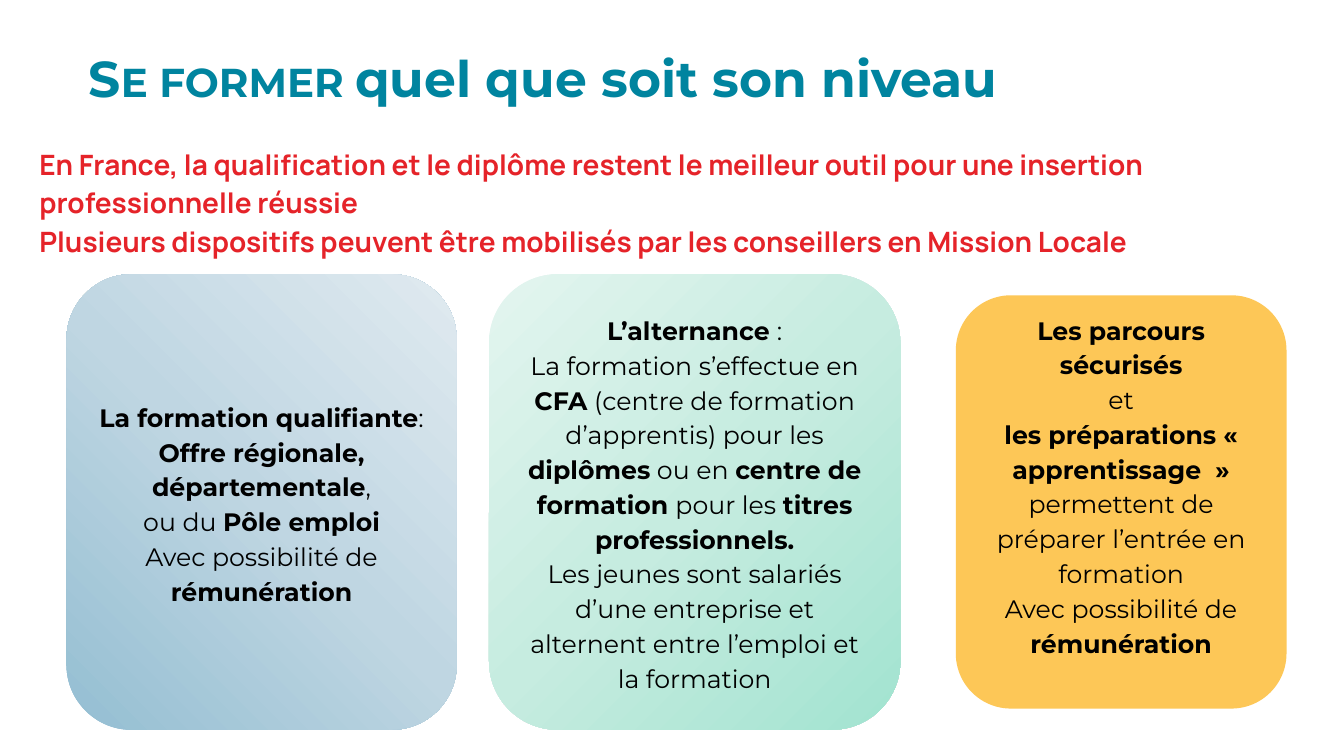
from lxml import etree
from pptx import Presentation
from pptx import util as u
from pptx.dml.color import RGBColor
from pptx.enum import shapes, text
from pptx.oxml import ns

TEAL = RGBColor(0x00, 0x84, 0x9F)
RED = RGBColor(0xE5, 0x23, 0x29)
BLACK = RGBColor(0x00, 0x00, 0x00)
YELLOW = RGBColor(0xFD, 0xC7, 0x57)
BLUES = [RGBColor(0x94, 0xBE, 0xD2), RGBColor(0xBF, 0xD6, 0xE2), RGBColor(0xE0, 0xEA, 0xF0)]
GREENS = [RGBColor(0xA2, 0xE3, 0xD0), RGBColor(0xC6, 0xEC, 0xE0), RGBColor(0xE3, 0xF5, 0xEF)]


class Deck:
    heading_font = "Montserrat"
    intro_font = "Manrope"
    inset = 0.13

    def __init__(self, width, height):
        self.prs = Presentation()
        self.prs.slide_width = u.Inches(width)
        self.prs.slide_height = u.Inches(height)
        self.s = self.prs.slides.add_slide(self.prs.slide_layouts[6])

    def fill_text(self, tf, paragraphs, font, size, color, spacing, align):
        tf.word_wrap = True
        for i, runs in enumerate(paragraphs):
            p = tf.paragraphs[0] if i == 0 else tf.add_paragraph()
            p.alignment = align
            p.line_spacing = spacing
            for content, bold in runs:
                r = p.add_run()
                r.text = content
                r.font.name = font
                r.font.size = u.Pt(size)
                r.font.bold = bold
                r.font.color.rgb = color

    def text_box(self, box, paragraphs, font, size, color, spacing):
        sp = self.s.shapes.add_textbox(*map(u.Inches, box))
        tf = sp.text_frame
        tf.margin_left = tf.margin_right = u.Inches(self.inset)
        tf.margin_top = tf.margin_bottom = u.Inches(self.inset)
        self.fill_text(tf, paragraphs, font, size, color, spacing, text.PP_ALIGN.LEFT)
        return tf

    def card(self, box, paragraphs, bottom=0.05):
        sp = self.s.shapes.add_shape(shapes.MSO_SHAPE.ROUNDED_RECTANGLE, *map(u.Inches, box))
        sp.shadow.inherit = False
        sp.line.fill.background()
        tf = sp.text_frame
        tf.vertical_anchor = text.MSO_ANCHOR.MIDDLE
        tf.margin_bottom = u.Inches(bottom)
        self.fill_text(tf, paragraphs, self.heading_font, 18, BLACK, 1.15, text.PP_ALIGN.CENTER)
        return sp

    def gradient(self, sp, colors):
        sp.fill.gradient()
        grad = sp._element.spPr.find(ns.qn("a:gradFill"))
        for child in list(grad):
            grad.remove(child)
        stops = etree.SubElement(grad, ns.qn("a:gsLst"))
        for i, color in enumerate(colors):
            stop = etree.SubElement(stops, ns.qn("a:gs"), pos=str(i * 50000))
            etree.SubElement(stop, ns.qn("a:srgbClr"), val=str(color))
        return grad

    def linear(self, sp, colors, angle):
        grad = self.gradient(sp, colors)
        etree.SubElement(grad, ns.qn("a:lin"), ang=str(angle * 60000), scaled="0")

    def radial(self, sp, colors):
        grad = self.gradient(sp, colors)
        circle = etree.SubElement(grad, ns.qn("a:path"), {"path": "circle"})
        etree.SubElement(circle, ns.qn("a:fillToRect"), l="100000", t="100000")

    def small_caps(self, r):
        r.font._element.set("cap", "small")


def main():
    deck = Deck(13.33, 7.5)

    deck.text_box((0.26, 1.28, 11.96, 0.78), [
        [("En France, la qualification et le diplôme restent le meilleur outil "
          "pour une insertion professionnelle réussie", True)],
        [("Plusieurs dispositifs peuvent être mobilisés par les conseillers "
          "en Mission Locale", True)],
    ], deck.intro_font, 20, RED, 1.15)

    tf = deck.text_box((0.75, 0.41, 11.21, 0.78), [
        [("Se former ", True), ("quel que soit son niveau", True)],
    ], deck.heading_font, 36, TEAL, 0.9)
    deck.small_caps(tf.paragraphs[0].runs[0])

    reward = [("Avec possibilité de ", False), ("rémunération", True)]

    qualifying = deck.card((0.66, 2.72, 3.87, 4.52), [
        [("La formation qualifiante", True), (":", False)],
        [("Offre régionale, départementale", True), (",", False)],
        [("ou du ", False), ("Pôle emploi", True)],
        reward,
    ])
    deck.linear(qualifying, BLUES, 315)

    secured = deck.card((9.48, 2.93, 3.28, 4.1), [
        [("Les parcours sécurisés", True)],
        [("et", False)],
        [("les préparations « apprentissage  » ", True),
         ("permettent de préparer l’entrée en formation", False)],
        reward,
    ], bottom=0.4)
    secured.fill.solid()
    secured.fill.fore_color.rgb = YELLOW

    alternating = deck.card((4.85, 2.72, 4.08, 4.52), [
        [("L’alternance ", True), (":", False)],
        [("La formation s’effectue en ", False), ("CFA", True),
         (" (centre de formation d’apprentis) pour les ", False), ("diplômes", True),
         (" ou en ", False), ("centre de formation ", True),
         ("pour les ", False), ("titres professionnels.", True)],
        [("Les jeunes sont salariés d’une entreprise et alternent "
          "entre l’emploi et la formation", False)],
    ])
    deck.radial(alternating, GREENS)

    deck.prs.save("out.pptx")


if __name__ == "__main__":
    main()
